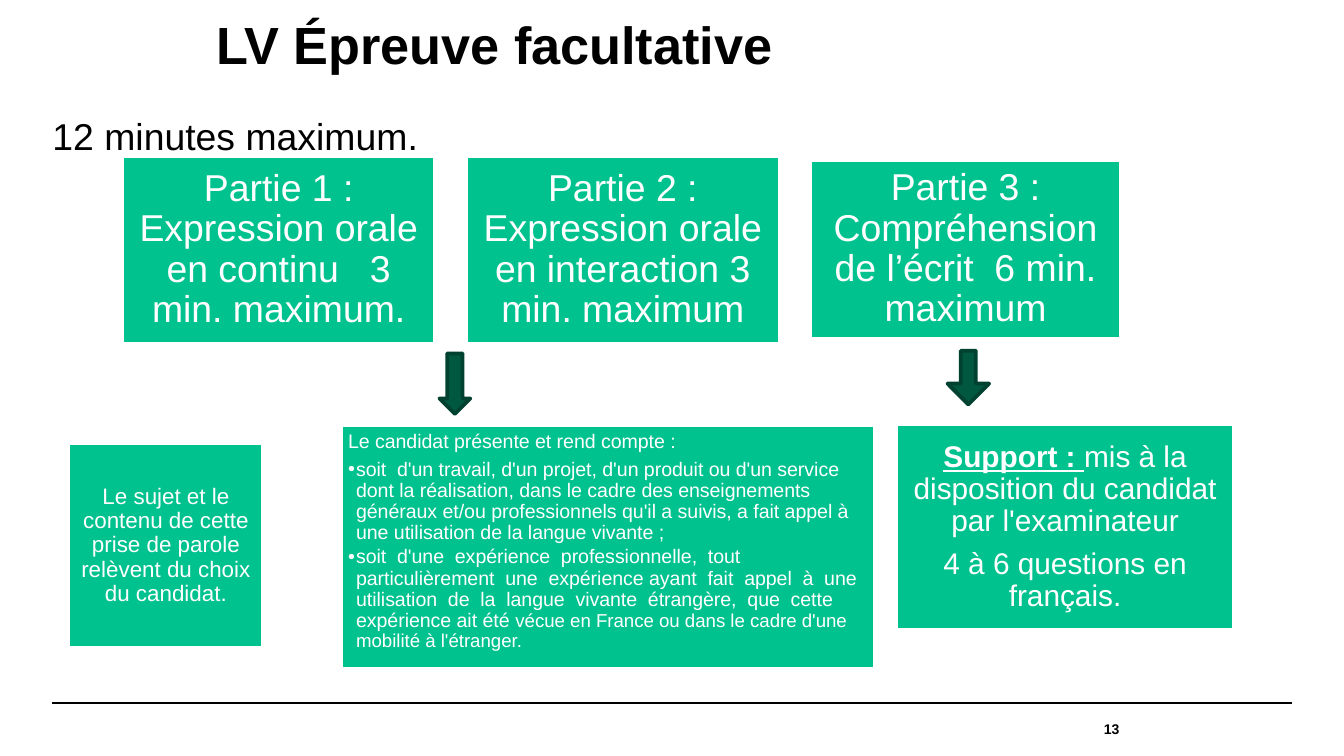
from dataclasses import dataclass

import pptx
import pptx.dml.color
import pptx.enum.shapes
import pptx.enum.text
import pptx.util
from lxml import etree
from pptx.oxml.ns import qn
from pptx.util import Inches

Align = pptx.enum.text.PP_ALIGN
Anchor = pptx.enum.text.MSO_ANCHOR
Preset = pptx.enum.shapes.MSO_SHAPE


@dataclass(frozen=True)
class Theme:
    font: str = "Arial"
    black: str = "000000"
    white: str = "FFFFFF"
    green: str = "00C28F"
    arrow_fill: str = "005841"
    arrow_line: str = "004130"
    title: float = 28
    large: float = 20
    support: float = 16
    choice: float = 12
    detail: float = 10.5
    detail_small: float = 10
    number: float = 7.5
    outline: float = 2
    rule: float = 0.8
    line_spacing: float = 0.9


THEME = Theme()


@dataclass(frozen=True)
class Area:
    left: float
    top: float
    width: float
    height: float

    def lengths(self) -> list:
        return [Inches(n) for n in (self.left, self.top, self.width, self.height)]


@dataclass(frozen=True)
class Span:
    text: str
    size: float
    bold: bool = False
    underline: bool = False


@dataclass(frozen=True)
class Para:
    spans: tuple[Span, ...]
    align: Align = Align.CENTER
    bullet: bool = False
    line_spacing: float = THEME.line_spacing
    after: float = 0.35  # share of the text size


@dataclass(frozen=True)
class Card:
    area: Area
    paras: tuple[Para, ...]
    inset: float
    anchor: Anchor = Anchor.MIDDLE


@dataclass(frozen=True)
class Arrow:
    area: Area
    shaft: float = 0.5


def rgb(value: str) -> pptx.dml.color.RGBColor:
    return pptx.dml.color.RGBColor.from_string(value)


def add_bullet(para) -> None:
    properties = para._p.get_or_add_pPr()
    properties.set("marL", str(Inches(0.06)))
    properties.set("indent", str(Inches(-0.06)))
    etree.SubElement(properties, qn("a:buFont")).set("typeface", THEME.font)
    etree.SubElement(properties, qn("a:buChar")).set("char", "•")


def write(frame, paras: tuple[Para, ...], color: str, inset: float, anchor: Anchor) -> None:
    frame.word_wrap = True
    frame.vertical_anchor = anchor
    frame.margin_left = frame.margin_right = Inches(inset)
    frame.margin_top = frame.margin_bottom = Inches(inset)
    for index, item in enumerate(paras):
        para = frame.add_paragraph() if index else frame.paragraphs[0]
        if item.bullet:
            add_bullet(para)
        para.alignment = item.align
        para.line_spacing = item.line_spacing
        para.space_after = pptx.util.Pt(round(item.after * item.spans[0].size, 1))
        for part in item.spans:
            span = para.add_run()
            span.text = part.text
            span.font.name = THEME.font
            span.font.size = pptx.util.Pt(part.size)
            span.font.bold = part.bold
            span.font.underline = part.underline
            span.font.color.rgb = rgb(color)


def draw_text(page, area: Area, para: Para, anchor: Anchor = Anchor.TOP) -> None:
    box = page.shapes.add_textbox(*area.lengths())
    write(box.text_frame, (para,), THEME.black, 0, anchor)


def draw_shape(page, preset: Preset, area: Area, fill: str, line: str):
    shape = page.shapes.add_shape(preset, *area.lengths())
    shape.shadow.inherit = False
    shape.fill.solid()
    shape.fill.fore_color.rgb = rgb(fill)
    shape.line.color.rgb = rgb(line)
    shape.line.width = pptx.util.Pt(THEME.outline)
    return shape


def draw_card(page, card: Card) -> None:
    box = draw_shape(page, Preset.RECTANGLE, card.area, THEME.green, THEME.white)
    write(box.text_frame, card.paras, THEME.white, card.inset, card.anchor)


def draw_arrow(page, arrow: Arrow) -> None:
    shape = draw_shape(page, Preset.DOWN_ARROW, arrow.area, THEME.arrow_fill, THEME.arrow_line)
    shape.adjustments[0] = arrow.shaft


def draw_rule(page, left: float, right: float, top: float) -> None:
    rule = page.shapes.add_connector(
        pptx.enum.shapes.MSO_CONNECTOR.STRAIGHT,
        Inches(left), Inches(top), Inches(right), Inches(top))
    rule.line.color.rgb = rgb(THEME.black)
    rule.line.width = pptx.util.Pt(THEME.rule)
    etree.SubElement(rule._element.spPr, qn("a:effectLst"))


def part_card(area: Area, text: str) -> Card:
    return Card(area, (Para((Span(text, THEME.large),)),), 0.08)


CARDS = (
    part_card(Area(0.91, 1.16, 2.33, 1.4),
              "Partie 1 : Expression orale en continu   3 min. maximum."),
    part_card(Area(3.47, 1.16, 2.33, 1.4),
              "Partie 2 : Expression orale en interaction 3 min. maximum"),
    part_card(Area(6.03, 1.19, 2.31, 1.33),
              "Partie 3 : Compréhension de l’écrit  6 min. maximum"),
    Card(Area(0.51, 3.3, 1.45, 1.52), (
        Para((Span("Le sujet et le contenu de cette prise de parole relèvent "
                   "du choix du candidat.", THEME.choice),)),
    ), 0.05),
    Card(Area(2.54, 3.16, 3.97, 1.82), (
        Para((Span("Le candidat présente et rend compte :", THEME.detail),), Align.LEFT),
        Para((Span("soit  d'un travail, d'un projet, d'un produit ou d'un service dont la "
                   "réalisation, dans le cadre des enseignements généraux et/ou "
                   "professionnels qu'il a suivis, a fait appel à une utilisation de la "
                   "langue vivante ;", THEME.detail),),
             Align.LEFT, bullet=True, after=0.15),
        Para((Span("soit  d'une  expérience  professionnelle,  tout  particulièrement  une  "
                   "expérience ayant  fait  appel  à  une  utilisation  de  la  langue  "
                   "vivante  étrangère,  que  cette expérience ait été ", THEME.detail),
              Span("vécue en France ou dans le cadre d'une mobilité à l'étranger.",
                   THEME.detail_small)),
             Align.LEFT, bullet=True, after=0.15),
    ), 0.05, Anchor.TOP),
    Card(Area(6.67, 3.16, 2.51, 1.53), (
        Para((Span("Support : ", THEME.support, bold=True, underline=True),
              Span("mis à la disposition du candidat par l'examinateur", THEME.support))),
        Para((Span("4 à 6 questions en français.", THEME.support),)),
    ), 0.07),
)

ARROWS = (
    Arrow(Area(3.27, 2.63, 0.23, 0.45)),
    Arrow(Area(7.05, 2.61, 0.31, 0.4), shaft=0.36),
)


def main() -> None:
    deck = pptx.Presentation()
    deck.slide_width = Inches(10)
    deck.slide_height = deck.slide_width * 9 // 16
    page = deck.slides.add_slide(deck.slide_layouts[6])

    draw_rule(page, 0.39, 9.61, 5.23)
    draw_text(page, Area(1.61, 0.14, 7.99, 0.55),
              Para((Span("LV Épreuve facultative", THEME.title, bold=True),), Align.LEFT, after=0))
    draw_text(page, Area(6.85, 5.23, 1.48, 0.39),
              Para((Span("13", THEME.number, bold=True),), Align.RIGHT, line_spacing=1.0, after=0),
              Anchor.MIDDLE)
    draw_text(page, Area(0.39, 0.84, 9.21, 3.98),
              Para((Span("12 minutes maximum.", THEME.large),), Align.LEFT,
                   line_spacing=1.0, after=0.25))
    for card in CARDS:
        draw_card(page, card)
    for arrow in ARROWS:
        draw_arrow(page, arrow)

    deck.save("out.pptx")


if __name__ == "__main__":
    main()
